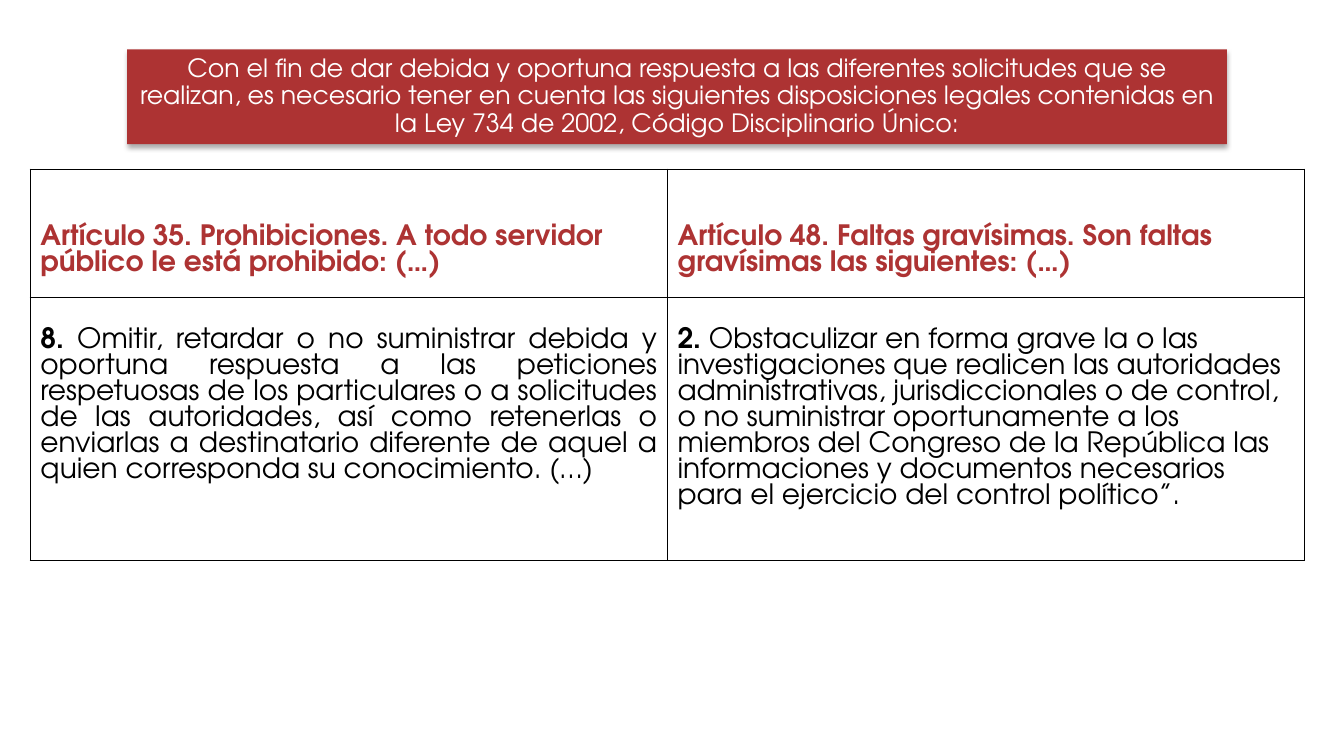
import pptx
import pptx.util
import pptx.dml.color
import pptx.enum.shapes
import pptx.enum.text
import pptx.oxml
import pptx.oxml.ns
from pptx.util import Inches

FONT = "TeX Gyre Adventor"
RED, BLACK, WHITE = "AD3333", "000000", "FFFFFF"
ALIGN = pptx.enum.text.PP_ALIGN
ANCHOR = pptx.enum.text.MSO_ANCHOR
NAMESPACE = pptx.oxml.ns.nsdecls("a")

INTRO = ("Con el fin de dar debida y oportuna respuesta a las diferentes solicitudes que se realizan, "
         "es necesario tener en cuenta las siguientes disposiciones legales contenidas en "
         "la Ley 734 de 2002, Código Disciplinario Único:")
ARTICLES = [
    ("Artículo 35. Prohibiciones. A todo servidor público le está prohibido: (…)",
     "8. ",
     "Omitir, retardar o no suministrar debida y oportuna respuesta a las peticiones respetuosas "
     "de los particulares o a solicitudes de las autoridades, así como retenerlas o enviarlas a "
     "destinatario diferente de aquel a quien corresponda su conocimiento. (…)",
     ALIGN.JUSTIFY),
    ("Artículo 48. Faltas gravísimas. Son faltas gravísimas las siguientes: (…)",
     "2. ",
     "Obstaculizar en forma grave la o las investigaciones que realicen las autoridades "
     "administrativas, jurisdiccionales o de control, o no suministrar oportunamente a los miembros "
     "del Congreso de la República las informaciones y documentos necesarios para el ejercicio del "
     "control político”.",
     ALIGN.LEFT),
]


def colour(value):
    return pptx.dml.color.RGBColor.from_string(value)


def add_span(para, text, size, fill, bold=False):
    span = para.add_run()
    span.text = text
    span.font.name = FONT
    span.font.size = pptx.util.Pt(size)
    span.font.bold = bold
    span.font.color.rgb = colour(fill)


def add_shadow(shape):
    shape.shadow.inherit = False
    effects = shape._element.spPr.find(pptx.oxml.ns.qn("a:effectLst"))
    effects.append(pptx.oxml.parse_xml(
        f'<a:outerShdw {NAMESPACE} blurRad="44450" dist="27940" dir="5400000" algn="ctr" rotWithShape="0">'
        f'<a:srgbClr val="{BLACK}"><a:alpha val="32000"/></a:srgbClr></a:outerShdw>'))


def add_banner(page, text):
    banner = page.shapes.add_shape(pptx.enum.shapes.MSO_SHAPE.RECTANGLE,
                                   Inches(1.26), Inches(0.49), Inches(10.91), Inches(0.94))
    banner.fill.solid()
    banner.fill.fore_color.rgb = colour(RED)
    banner.line.fill.background()
    add_shadow(banner)
    banner.text_frame.word_wrap = True
    banner.text_frame.vertical_anchor = ANCHOR.MIDDLE
    para = banner.text_frame.paragraphs[0]
    para.alignment = ALIGN.CENTER
    para.line_spacing = 0.9
    add_span(para, text, 18, WHITE)


def style_cell(cell, anchor, top, bottom):
    cell.vertical_anchor = anchor
    cell.margin_top = Inches(top)
    cell.margin_bottom = Inches(bottom)
    properties = cell._tc.get_or_add_tcPr()
    for side in ("lnL", "lnR", "lnT", "lnB"):
        properties.append(pptx.oxml.parse_xml(
            f'<a:{side} {NAMESPACE} w="12700"><a:solidFill><a:srgbClr val="{BLACK}"/></a:solidFill></a:{side}>'))
    cell.fill.background()


def fill_cell(cell, alignment, spans):
    para = cell.text_frame.paragraphs[0]
    para.alignment = alignment
    para.line_spacing = pptx.util.Pt(18.6)
    for text, fill, bold in spans:
        add_span(para, text, 20, fill, bold)


def add_articles(page, articles):
    heights = (1.27, 2.61)
    frame = page.shapes.add_table(len(heights), len(articles), Inches(0.3), Inches(1.68),
                                  Inches(12.64), Inches(sum(heights)))
    table = frame.table
    table.first_row = False
    table.horz_banding = False
    for row, height in zip(table.rows, heights):
        row.height = Inches(height)
    for index, (heading, number, text, alignment) in enumerate(articles):
        head, body = table.cell(0, index), table.cell(1, index)
        style_cell(head, ANCHOR.BOTTOM, 0.05, 0.2)
        fill_cell(head, ALIGN.LEFT, [(heading, RED, True)])
        style_cell(body, ANCHOR.TOP, 0.3, 0.05)
        fill_cell(body, alignment, [(number, BLACK, True), (text, BLACK, False)])


def main():
    deck = pptx.Presentation()
    deck.slide_width = Inches(13.33)
    deck.slide_height = Inches(7.5)
    page = deck.slides.add_slide(deck.slide_layouts[6])
    add_banner(page, INTRO)
    add_articles(page, ARTICLES)
    deck.save("out.pptx")


if __name__ == "__main__":
    main()
